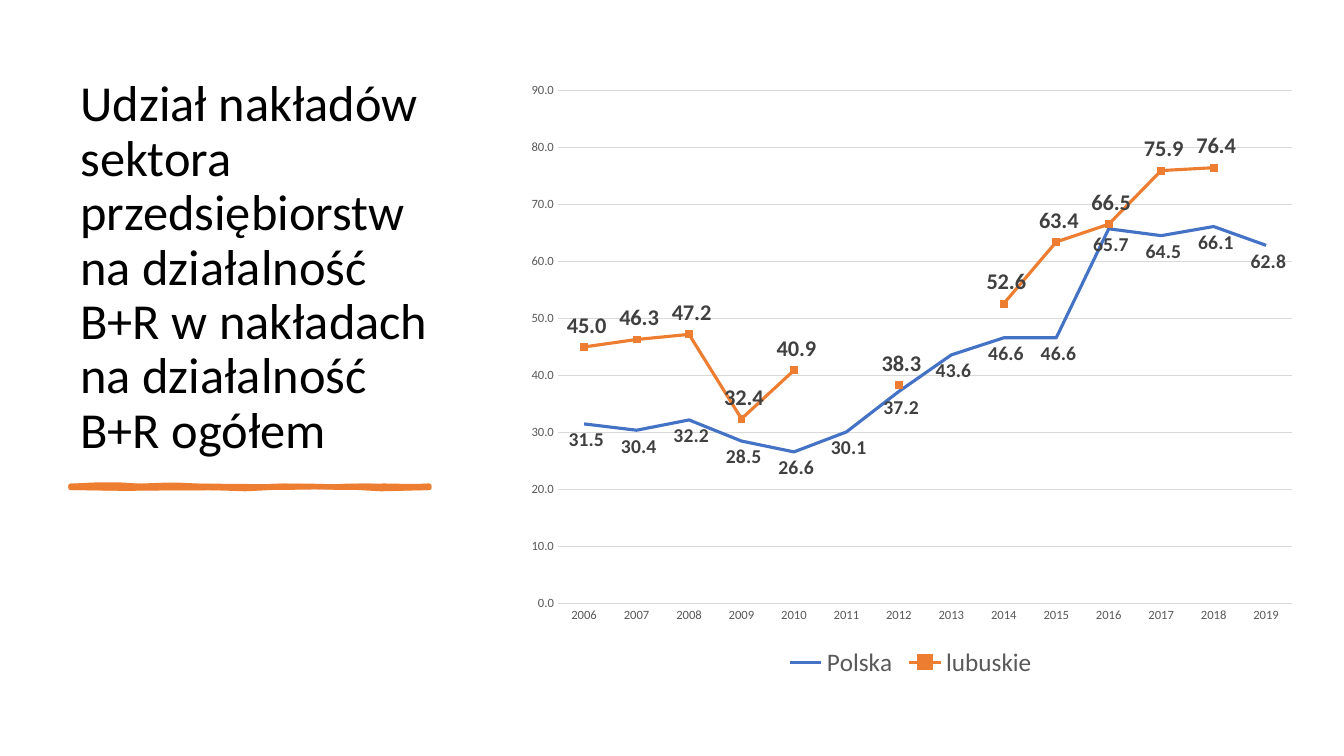
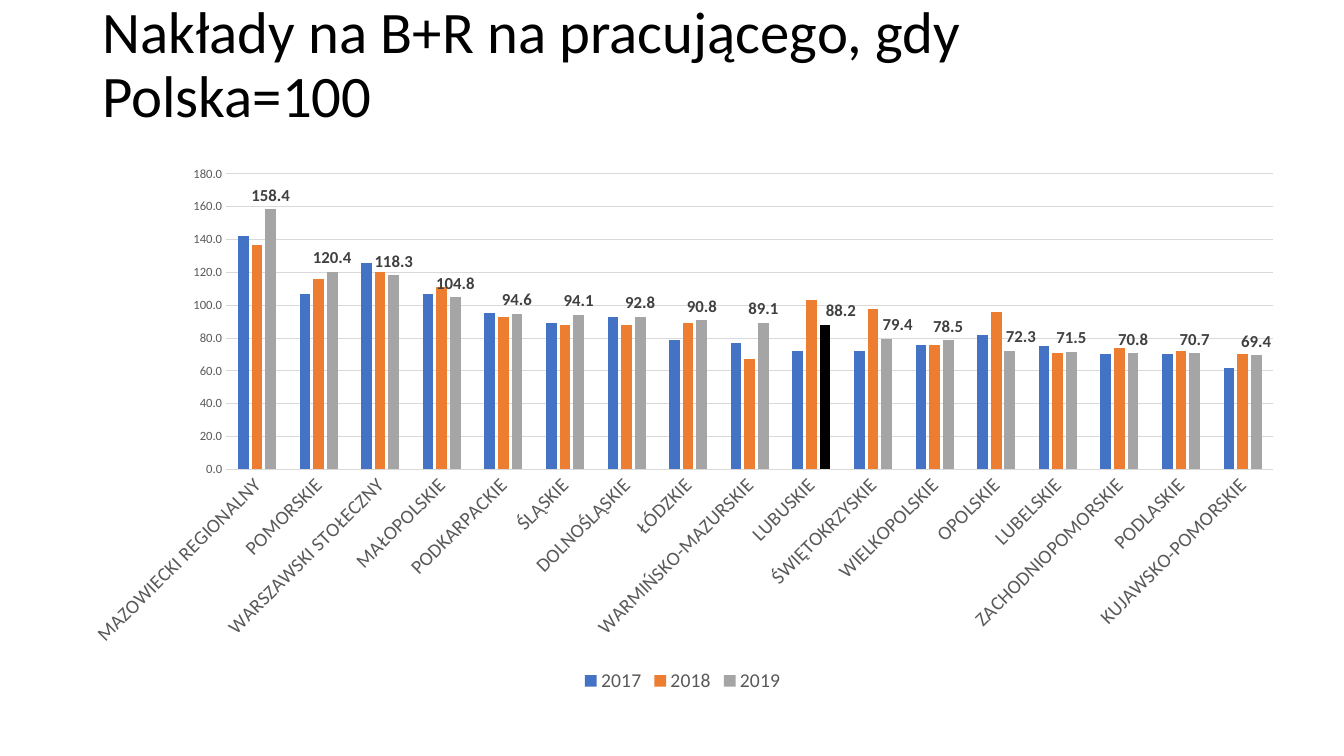
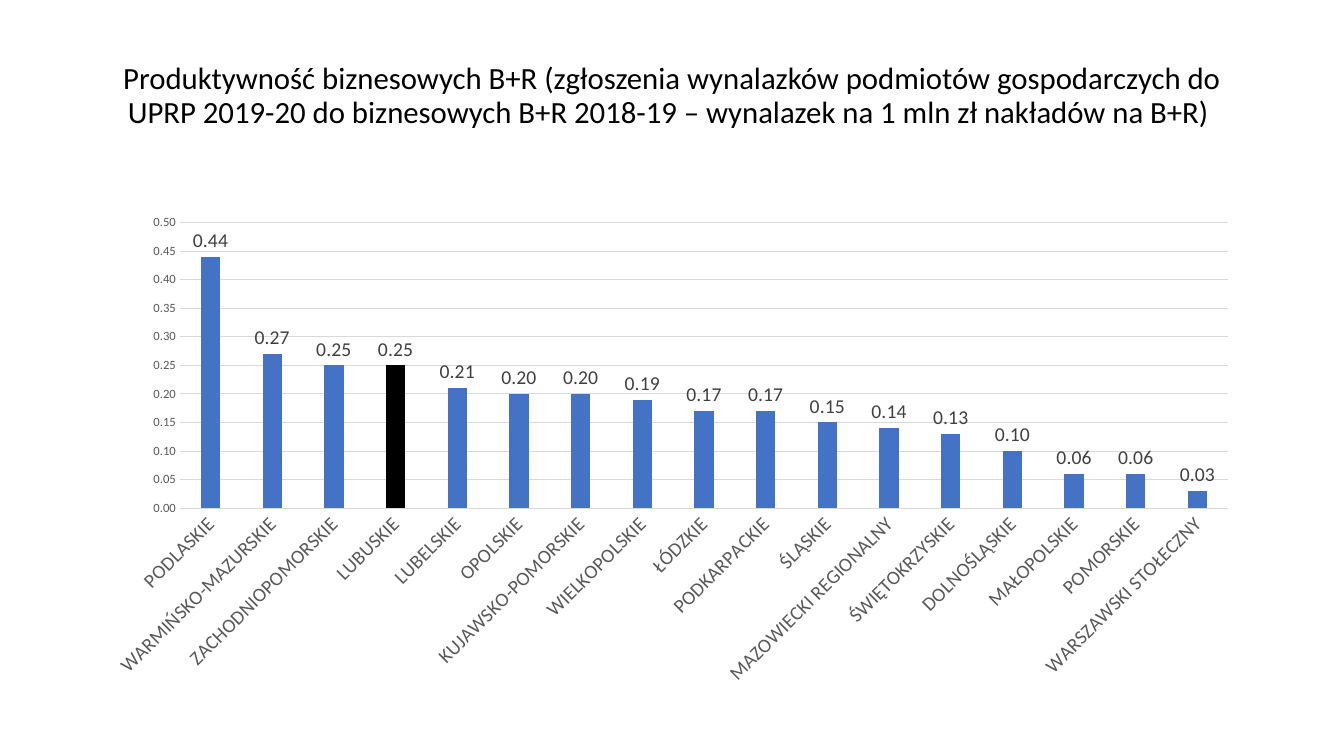
"""Build three slides on research and development spending in Polish regions."""
import dataclasses
import typing

import pptx
import pptx.chart.data
import pptx.dml.color
import pptx.enum.chart
import pptx.enum.text
import pptx.oxml
import pptx.util

Pt = pptx.util.Pt
ChartType = pptx.enum.chart.XL_CHART_TYPE
LabelPosition = pptx.enum.chart.XL_LABEL_POSITION
MarkerStyle = pptx.enum.chart.XL_MARKER_STYLE
Align = pptx.enum.text.PP_ALIGN
Box = tuple[float, float, float, float]
Point = tuple[float, float]

FONT = "Calibri"
AUTOMATIC_ROTATION = "-60000000"
COLORS = {
    "black": "000000",
    "blue": "4472C4",
    "orange": "ED7D31",
    "gray": "A5A5A5",
    "axis_text": "595959",
    "label_text": "404040",
    "grid": "D9D9D9",
}
TITLE_FRAME = {
    "word_wrap": True,
    "auto_size": pptx.enum.text.MSO_AUTO_SIZE.NONE,
    "vertical_anchor": pptx.enum.text.MSO_ANCHOR.BOTTOM,
}
AXIS_FORMAT = {
    "major_tick_mark": pptx.enum.chart.XL_TICK_MARK.NONE,
    "minor_tick_mark": pptx.enum.chart.XL_TICK_MARK.NONE,
}
LEGEND_FORMAT = {
    "position": pptx.enum.chart.XL_LEGEND_POSITION.BOTTOM,
    "include_in_layout": False,
}
WIDE_TITLE_BOX = (66, 22.75, 828, 73.5)


@dataclasses.dataclass(frozen=True)
class Title:
    """Describe a slide title."""

    text: str
    box: Box
    size: float
    alignment: Align = Align.LEFT


@dataclasses.dataclass(frozen=True)
class Labels:
    """Describe the value labels of a series."""

    size: float
    position: LabelPosition = LabelPosition.OUTSIDE_END
    bold: bool = False
    shifts: dict[int, float] = dataclasses.field(default_factory=dict)


@dataclasses.dataclass(frozen=True)
class Series:
    """Describe one data series."""

    name: str
    values: list[typing.Optional[float]]
    color: str
    labels: typing.Optional[Labels] = None
    highlight: typing.Optional[int] = None
    marker: bool = False


@dataclasses.dataclass(frozen=True)
class ChartPlan:
    """Describe a chart with its axes and legend."""

    box: Box
    kind: ChartType
    categories: list[str]
    series: list[Series]
    number_format: str
    maximum: float
    step: float
    category_size: float
    legend_size: typing.Optional[float] = None


@dataclasses.dataclass(frozen=True)
class Stroke:
    """Describe a hand-drawn bar by its upper and lower Bézier edges."""

    upper: list[Point]
    lower: list[Point]


UNDERLINE = [
    Stroke(
        [(50.4, 347), (69.8, 345.6), (87.1, 345.6), (99.4, 347),
         (111.6, 348.5), (127.4, 347), (150.5, 347),
         (173.5, 347), (187.2, 347.8), (204.5, 347),
         (221.8, 346.3), (244.1, 348.5), (258.5, 347),
         (272.9, 346.3), (296.6, 347.8), (306.7, 347)],
        [(306.7, 348.5), (293.8, 349.2), (262.1, 347.8), (250.6, 348.5),
         (239, 349.2), (218.9, 346.3), (194.4, 348.5),
         (169.2, 350.6), (166.3, 348.5), (143.3, 348.5),
         (119.5, 348.5), (95, 349.9), (50.4, 348.5)],
    ),
    Stroke(
        [(50.4, 347), (73.4, 348.5), (79.2, 347.8), (99.4, 347),
         (119.5, 346.3), (121.7, 345.6), (143.3, 347),
         (164.2, 348.5), (187.9, 347.8), (199.4, 347),
         (211, 346.3), (235.4, 349.2), (247.7, 347),
         (260.6, 345.6), (285.8, 349.9), (306.7, 347)],
        [(306.7, 348.5), (296.6, 348.5), (267.8, 350.6), (255.6, 348.5),
         (243.4, 347), (222.5, 348.5), (199.4, 348.5),
         (175.7, 348.5), (172.8, 347.8), (155.5, 348.5),
         (139, 349.2), (129.6, 348.5), (104.4, 348.5),
         (79.9, 349.2), (66.2, 348.5), (50.4, 348.5)],
    ),
]

SLIDES = [
    (
        Title(
            "Udział nakładów sektora przedsiębiorstw na działalność B+R "
            "w nakładach na działalność B+R ogółem",
            (50.4, 50.1, 281.5, 281.5), 36,
        ),
        ChartPlan(
            box=(366.3, 50.4, 568.2, 437.2),
            kind=ChartType.LINE_MARKERS,
            categories=[str(year) for year in range(2006, 2020)],
            series=[
                Series("Polska",
                       [31.5, 30.4, 32.2, 28.5, 26.6, 30.1, 37.2,
                        43.6, 46.6, 46.6, 65.7, 64.5, 66.1, 62.8],
                       "blue", Labels(14, LabelPosition.BELOW, True)),
                Series("lubuskie",
                       [45, 46.3, 47.2, 32.4, 40.9, None, 38.3,
                        None, 52.6, 63.4, 66.5, 75.9, 76.4, None],
                       "orange", Labels(16, LabelPosition.ABOVE, True), marker=True),
            ],
            number_format="#\\ ##0.0", maximum=90, step=10,
            category_size=9, legend_size=18,
        ),
        UNDERLINE,
    ),
    (
        Title("Nakłady na B+R na pracującego, gdy Polska=100", WIDE_TITLE_BOX, 42),
        ChartPlan(
            box=(48.2, 111.3, 879, 386.6),
            kind=ChartType.COLUMN_CLUSTERED,
            categories=[
                "MAZOWIECKI REGIONALNY", "POMORSKIE", "WARSZAWSKI STOŁECZNY",
                "MAŁOPOLSKIE", "PODKARPACKIE", "ŚLĄSKIE", "DOLNOŚLĄSKIE", "ŁÓDZKIE",
                "WARMIŃSKO-MAZURSKIE", "LUBUSKIE", "ŚWIĘTOKRZYSKIE", "WIELKOPOLSKIE",
                "OPOLSKIE", "LUBELSKIE", "ZACHODNIOPOMORSKIE", "PODLASKIE",
                "KUJAWSKO-POMORSKIE",
            ],
            series=[
                Series("2017",
                       [142, 107, 126, 107, 95, 89, 93, 79, 77,
                        72, 72, 76, 82, 75, 70, 70, 62], "blue"),
                Series("2018",
                       [137, 116, 120, 111, 93, 88, 88, 89, 67,
                        103, 98, 76, 96, 71, 74, 72, 70], "orange"),
                Series("2019",
                       [158.4, 120.4, 118.3, 104.8, 94.6, 94.1, 92.8, 90.8, 89.1,
                        88.2, 79.4, 78.5, 72.3, 71.5, 70.8, 70.7, 69.4],
                       "gray",
                       Labels(12, bold=True, shifts={9: 0.013, 10: 0.009, 12: 0.009}),
                       highlight=9),
            ],
            number_format="0.0", maximum=180, step=20,
            category_size=14, legend_size=14,
        ),
        [],
    ),
    (
        Title(
            "Produktywność biznesowych B+R (zgłoszenia wynalazków podmiotów "
            "gospodarczych do UPRP 2019-20 do biznesowych B+R 2018-19 – wynalazek "
            "na 1 mln zł nakładów na B+R) ",
            WIDE_TITLE_BOX, 22, Align.CENTER,
        ),
        ChartPlan(
            box=(66, 146.7, 828, 350),
            kind=ChartType.COLUMN_CLUSTERED,
            categories=[
                "PODLASKIE", "WARMIŃSKO-MAZURSKIE", "ZACHODNIOPOMORSKIE", "LUBUSKIE",
                "LUBELSKIE", "OPOLSKIE", "KUJAWSKO-POMORSKIE", "WIELKOPOLSKIE",
                "ŁÓDZKIE", "PODKARPACKIE", "ŚLĄSKIE", "MAZOWIECKI REGIONALNY",
                "ŚWIĘTOKRZYSKIE", "DOLNOŚLĄSKIE", "MAŁOPOLSKIE", "POMORSKIE",
                "WARSZAWSKI STOŁECZNY",
            ],
            series=[
                Series("Series 1",
                       [0.44, 0.27, 0.25, 0.25, 0.21, 0.2, 0.2, 0.19, 0.17,
                        0.17, 0.15, 0.14, 0.13, 0.1, 0.06, 0.06, 0.03],
                       "blue", Labels(14), highlight=3),
            ],
            number_format="0.00", maximum=0.5, step=0.05,
            category_size=14,
        ),
        [],
    ),
]


def color_of(name: str) -> pptx.dml.color.RGBColor:
    """Return the named colour."""
    return pptx.dml.color.RGBColor.from_string(COLORS[name])


def set_format(target: typing.Any, values: dict[str, typing.Any]) -> None:
    """Set every attribute listed in a dict of format values."""
    for name, value in values.items():
        setattr(target, name, value)


def set_font(font: typing.Any, size: float, color: str, bold: bool = False) -> None:
    """Style a font."""
    set_format(font, {"name": FONT, "size": Pt(size), "bold": bold})
    font.color.rgb = color_of(color)


def set_fill(fill: typing.Any, color: str) -> None:
    """Apply a solid fill."""
    fill.solid()
    fill.fore_color.rgb = color_of(color)


def set_line(line: typing.Any, color: str, width: float) -> None:
    """Apply a solid line."""
    set_fill(line.fill, color)
    line.width = Pt(width)


def add_title(slide: typing.Any, title: Title) -> None:
    """Add a slide title that sits on the bottom of its box."""
    frame = slide.shapes.add_textbox(*map(Pt, title.box)).text_frame
    set_format(frame, TITLE_FRAME)
    paragraph = frame.paragraphs[0]
    set_format(paragraph, {"alignment": title.alignment, "line_spacing": 0.9})
    run = paragraph.add_run()
    run.text = title.text
    set_font(run.font, title.size, "black")


def flatten(points: list[Point], steps: int = 3) -> list[Point]:
    """Turn a chain of cubic Bézier curves into short straight segments."""
    result = [points[0]]
    for start in range(0, len(points) - 1, 3):
        curve = points[start:start + 4]
        for step in range(1, steps + 1):
            t = step / steps
            weights = ((1 - t) ** 3, 3 * t * (1 - t) ** 2, 3 * t * t * (1 - t), t ** 3)
            x, y = (sum(w * p[axis] for w, p in zip(weights, curve)) for axis in (0, 1))
            result.append((x, y))
    return result


def add_underline(slide: typing.Any, strokes: list[Stroke]) -> None:
    """Draw the hand-drawn underline as one shape."""
    outlines = [
        [(Pt(x), Pt(y)) for x, y in flatten(stroke.upper) + flatten(stroke.lower)]
        for stroke in strokes
    ]
    builder = slide.shapes.build_freeform(*outlines[0][0])
    for index, outline in enumerate(outlines):
        if index:
            builder.move_to(*outline[0])
        builder.add_line_segments(outline[1:], close=True)
    shape = builder.convert_to_shape()
    shape.shadow.inherit = False
    set_fill(shape.fill, "orange")
    set_line(shape.line, "orange", 3)


def add_labels(chart: typing.Any, series: typing.Any, labels: Labels, number_format: str) -> None:
    """Show the values of a series and shift single labels sideways."""
    data_labels = series.data_labels
    set_format(data_labels, {
        "show_value": True,
        "position": labels.position,
        "number_format": number_format,
        "number_format_is_linked": False,
    })
    set_font(data_labels.font, labels.size, "label_text", labels.bold)
    for index, shift in labels.shifts.items():
        label = series.points[index].data_label
        label.position = labels.position
        set_font(label.font, labels.size, "label_text", labels.bold)
        layout = pptx.oxml.parse_xml(
            '<c:layout xmlns:c="http://schemas.openxmlformats.org/drawingml/2006/chart">'
            f'<c:manualLayout><c:x val="{shift}"/><c:y val="0"/></c:manualLayout></c:layout>'
        )
        chart.element.xpath(f"//c:dLbl/c:idx[@val='{index}']")[0].addnext(layout)


def style_series(series: typing.Any, plan: Series, is_line: bool) -> None:
    """Colour a series and its highlighted point."""
    if is_line:
        series.smooth = False
        set_line(series.format.line, plan.color, 2.25)
        series.marker.style = MarkerStyle.SQUARE if plan.marker else MarkerStyle.NONE
        if plan.marker:
            series.marker.size = 5
            set_fill(series.marker.format.fill, plan.color)
            set_line(series.marker.format.line, plan.color, 0.75)
    else:
        series.invert_if_negative = False
        set_fill(series.format.fill, plan.color)
    if plan.highlight is not None:
        set_fill(series.points[plan.highlight].format.fill, "black")


def style_axes(chart: typing.Any, plan: ChartPlan) -> None:
    """Style both axes and the grid."""
    category_axis, value_axis = chart.category_axis, chart.value_axis
    for axis, size in ((category_axis, plan.category_size), (value_axis, 9)):
        set_format(axis, AXIS_FORMAT)
        set_font(axis.tick_labels.font, size, "axis_text")
    set_line(category_axis.format.line, "grid", 0.75)
    for body in chart.element.xpath("//c:catAx/c:txPr/a:bodyPr"):
        body.set("rot", AUTOMATIC_ROTATION)
        body.set("vert", "horz")
    set_format(value_axis, {
        "minimum_scale": 0, "maximum_scale": plan.maximum, "major_unit": plan.step,
    })
    set_format(value_axis.tick_labels, {
        "number_format": plan.number_format, "number_format_is_linked": False,
    })
    value_axis.format.line.fill.background()
    set_line(value_axis.major_gridlines.format.line, "grid", 0.75)


def add_chart(slide: typing.Any, plan: ChartPlan) -> None:
    """Add a chart with its series, axes and legend."""
    data = pptx.chart.data.CategoryChartData(number_format=plan.number_format)
    data.categories = plan.categories
    for item in plan.series:
        data.add_series(item.name, item.values)
    chart = slide.shapes.add_chart(plan.kind, *map(Pt, plan.box), data).chart
    set_font(chart.font, 10, "black")
    chart.has_title = False
    plot = chart.plots[0]
    plot.vary_by_categories = False
    is_line = plan.kind == ChartType.LINE_MARKERS
    if not is_line:
        set_format(plot, {"gap_width": 219, "overlap": -27})
    for series, item in zip(plot.series, plan.series):
        style_series(series, item, is_line)
        if item.labels:
            add_labels(chart, series, item.labels, plan.number_format)
    style_axes(chart, plan)
    chart.has_legend = plan.legend_size is not None
    if plan.legend_size is not None:
        set_format(chart.legend, LEGEND_FORMAT)
        set_font(chart.legend.font, plan.legend_size, "axis_text")


def main() -> None:
    """Build and save the presentation."""
    presentation = pptx.Presentation()
    set_format(presentation, {"slide_width": Pt(960), "slide_height": Pt(540)})
    for title, chart_plan, strokes in SLIDES:
        slide = presentation.slides.add_slide(presentation.slide_layouts[6])
        add_title(slide, title)
        if strokes:
            add_underline(slide, strokes)
        add_chart(slide, chart_plan)
    presentation.save("out.pptx")


if __name__ == "__main__":
    main()
